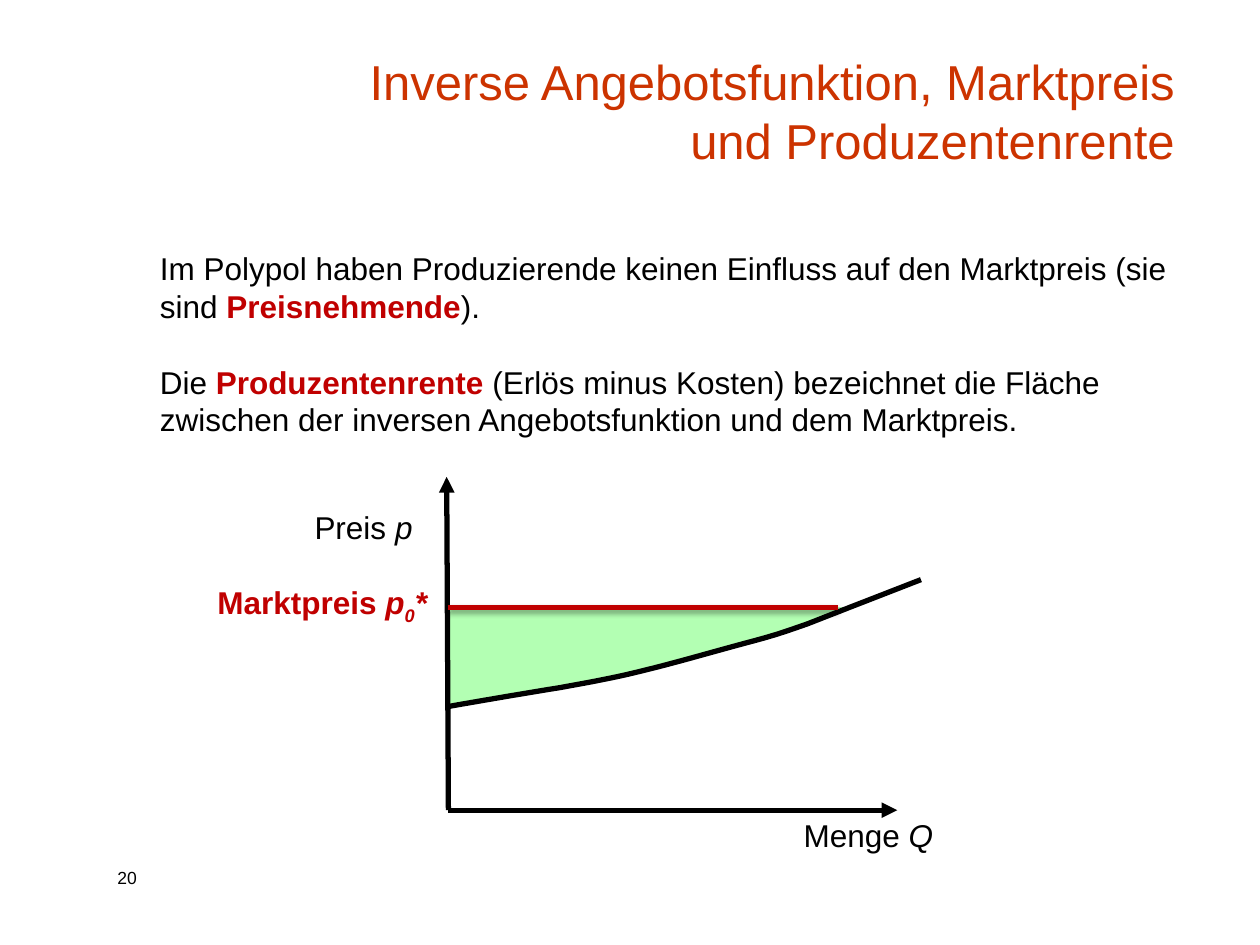
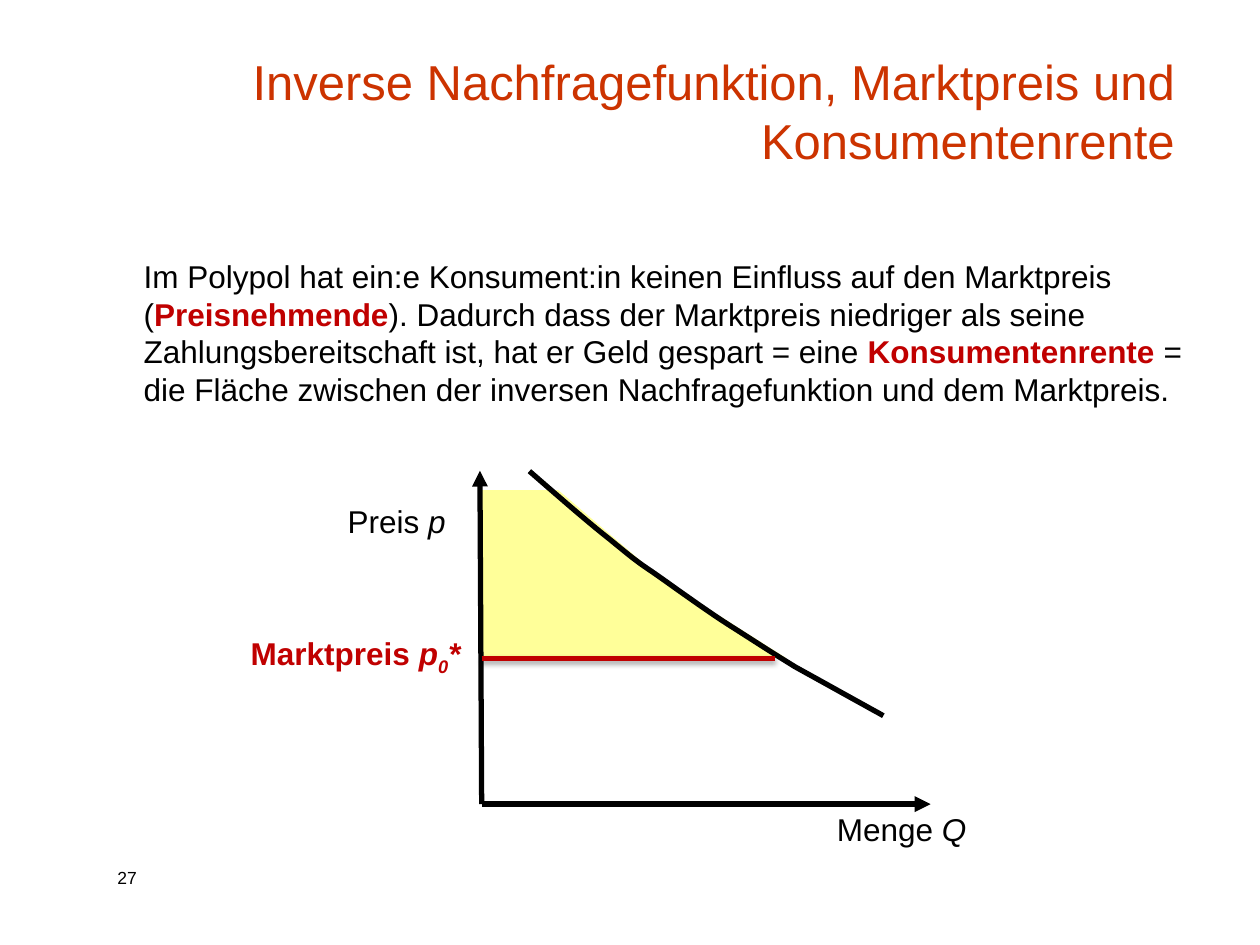
from lxml import etree
from pptx import Presentation
from pptx import util as u
from pptx.dml.color import RGBColor
from pptx.enum import shapes, text
from pptx.oxml.ns import qn

ORANGE = RGBColor(0xCC, 0x33, 0x00)
RED = RGBColor(0xC0, 0x00, 0x00)
BLACK = RGBColor(0x00, 0x00, 0x00)
GREEN = RGBColor(0xB3, 0xFF, 0xB3)
YELLOW = RGBColor(0xFF, 0xFF, 0x99)

PLAIN = {}
ITALIC = {"italic": True}
KEYWORD = {"bold": True, "color": RED}
SYMBOL = {**KEYWORD, "italic": True}
INDEX = {**SYMBOL, "baseline": -25000}
NO_INSETS = dict.fromkeys(
    ("margin_left", "margin_top", "margin_right", "margin_bottom"), 0)


class Deck:
    """Holds the shared style and the current slide, and draws each element."""

    font = "Arial"
    line_width = 3
    curve_steps = 10

    def __init__(self):
        self.prs = Presentation()
        self.prs.slide_width, self.prs.slide_height = u.Pt(720), u.Pt(540)

    def new_slide(self, title, title_left, number):
        self.slide = self.prs.slides.add_slide(self.prs.slide_layouts[6])
        self.text((title_left, 30.25, 678.25 - title_left, 70), [[(title, PLAIN)]],
                  size=28, color=ORANGE, align=text.PP_ALIGN.RIGHT,
                  frame_format={"vertical_anchor": text.MSO_ANCHOR.BOTTOM})
        self.text((60, 492, 48, 19), [[(number, PLAIN)]], size=10)

    def text(self, box, paragraphs, size=18, color=BLACK,
             align=text.PP_ALIGN.LEFT, frame_format=PLAIN):
        frame = self.slide.shapes.add_textbox(*map(u.Pt, box)).text_frame
        for name, value in {"word_wrap": True, **frame_format}.items():
            setattr(frame, name, value)
        for index, runs in enumerate(paragraphs):
            paragraph = frame.add_paragraph() if index else frame.paragraphs[0]
            paragraph.alignment = align
            if index:
                paragraph.space_before = u.Pt(21.5)
            for words, style in runs:
                self.run(paragraph, words, {"color": color, **style}, size)

    def run(self, paragraph, words, style, size):
        run = paragraph.add_run()
        run.text = words
        style = {"name": self.font, "size": u.Pt(size), **style}
        run.font.color.rgb = style.pop("color")
        baseline = style.pop("baseline", None)
        for name, value in style.items():
            setattr(run.font, name, value)
        if baseline:
            run.font._element.set("baseline", str(baseline))

    def line(self, start, end, color=BLACK, arrow=False, shadow=False):
        line = self.slide.shapes.add_connector(
            shapes.MSO_CONNECTOR.STRAIGHT, *map(u.Pt, (*start, *end)))
        line.line.color.rgb = color
        line.line.width = u.Pt(self.line_width)
        if arrow:
            etree.SubElement(line.line._get_or_add_ln(), qn("a:tailEnd"), type="triangle")
        effects = etree.SubElement(line._element.spPr, qn("a:effectLst"))
        if shadow:
            outer = etree.SubElement(
                effects, qn("a:outerShdw"), blurRad=str(u.Pt(3.1)), dist=str(u.Pt(1.8)),
                dir="5400000", rotWithShape="0")
            tint = etree.SubElement(outer, qn("a:srgbClr"), val=str(BLACK))
            etree.SubElement(tint, qn("a:alpha"), val="35000")

    def outline(self, points, closed):
        (x, y), *others = [tuple(map(u.Pt, point)) for point in points]
        builder = self.slide.shapes.build_freeform(x, y)
        builder.add_line_segments(others, close=closed)
        shape = builder.convert_to_shape()
        shape.shadow.inherit = False
        return shape

    def area(self, points, color):
        shape = self.outline(points, True)
        shape.fill.solid()
        shape.fill.fore_color.rgb = color
        shape.line.fill.background()

    def curve(self, controls):
        points = [controls[0]]
        for first in range(0, len(controls) - 1, 3):
            a, b, c, d = controls[first:first + 4]
            for step in range(1, self.curve_steps + 1):
                t = step / self.curve_steps
                weights = ((1 - t) ** 3, 3 * t * (1 - t) ** 2, 3 * t * t * (1 - t), t ** 3)
                points.append(tuple(sum(w * v for w, v in zip(weights, axis))
                                    for axis in zip(a, b, c, d)))
        shape = self.outline(points, False)
        shape.fill.background()
        shape.line.color.rgb = BLACK
        shape.line.width = u.Pt(self.line_width)

    def label(self, left, top, width, runs):
        self.text((left, top, width, 22), [runs], frame_format=NO_INSETS)

    def market(self, origin, surplus, surplus_color, curve, price, quantity):
        x, y = origin
        self.area(surplus, surplus_color)
        self.label(x - 76.5, y - 172.75, 94, [("Preis", PLAIN), (" p", ITALIC)])
        self.label(x + 203, y + 3.5, 80, [("Menge", PLAIN), (" Q", ITALIC)])
        self.line(origin, (x + 256.5, y), arrow=True)
        self.line(origin, (x - 1, y - 190.5), arrow=True)
        self.curve(curve)
        self.line((x, price), (x + quantity, price), RED, shadow=True)
        self.label(x - 132, price - 13.75, 123,
                   [("Marktpreis", KEYWORD), (" p", SYMBOL), ("0", INDEX), ("*", SYMBOL)])


def main():
    deck = Deck()

    deck.new_slide("Inverse Angebotsfunktion, Marktpreis und Produzentenrente", 150.5, "20")
    deck.text((84.25, 139, 614, 117), [
        [("Im Polypol haben Produzierende keinen Einfluss auf den Marktpreis (sie sind ", PLAIN),
         ("Preisnehmende", KEYWORD), (").", PLAIN)],
        [("Die ", PLAIN), ("Produzentenrente ", KEYWORD),
         ("(Erlös minus Kosten) bezeichnet die Fläche zwischen der inversen "
          "Angebotsfunktion und dem Marktpreis.", PLAIN)]])
    deck.market(
        origin=(256.25, 463), price=347, quantity=222.5, surplus_color=GREEN,
        surplus=[(256.25, 347), (486.75, 347), (442, 362), (397.5, 376.5),
                 (315.5, 394), (256.25, 404)],
        curve=[(255, 404), (265.75, 402), (301, 396), (319.75, 393),
               (339, 389.5), (350.5, 387.5), (368.5, 383),
               (386, 378.75), (411, 371.5), (427, 367.25),
               (442.75, 363), (445, 362.25), (461.5, 356.5),
               (478, 350), (513.5, 336.25), (526.25, 331.25)])

    deck.new_slide("Inverse Nachfragefunktion, Marktpreis und Konsumentenrente", 134.75, "27")
    deck.text((75, 143.25, 614, 94), [
        [("Im Polypol hat ein:e Konsument:in keinen Einfluss auf den Marktpreis (", PLAIN),
         ("Preisnehmende", KEYWORD),
         ("). Dadurch dass der Marktpreis niedriger als seine Zahlungsbereitschaft ist, "
          "hat er Geld gespart = eine ", PLAIN),
         ("Konsumentenrente ", KEYWORD),
         ("= die Fläche zwischen der inversen Nachfragefunktion und dem Marktpreis.", PLAIN)]])
    deck.market(
        origin=(275.25, 459.5), price=376.25, quantity=167.75, surplus_color=YELLOW,
        surplus=[(275.25, 376), (449.25, 376), (378.75, 331.25), (319, 280), (275.25, 280)],
        curve=[(504.75, 409), (496.75, 404.5), (469.5, 389.5), (454.25, 381),
               (440, 372.25), (431.25, 366.5), (417.5, 357.75),
               (404, 349.25), (385.25, 335.5), (373.75, 327.5),
               (362.25, 319.75), (360.75, 318.25), (348.5, 308.25),
               (336.25, 298.75), (311.75, 277.25), (302.5, 269.25)])

    deck.prs.save("out.pptx")


if __name__ == "__main__":
    main()
